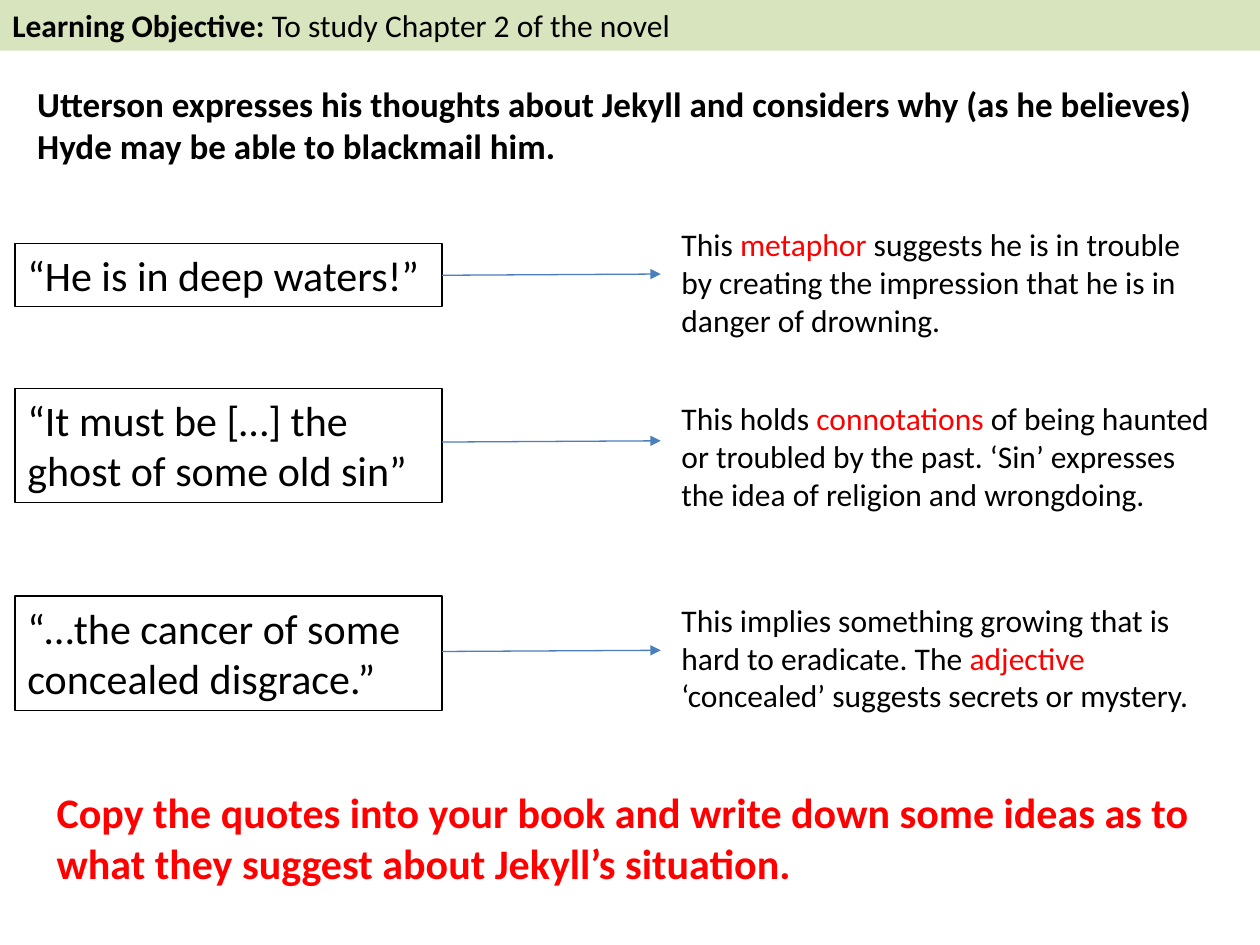
from lxml import etree
from pptx import Presentation
from pptx.dml.color import RGBColor
from pptx.enum.shapes import MSO_CONNECTOR, MSO_SHAPE
from pptx.enum.text import MSO_ANCHOR, PP_ALIGN
from pptx.oxml.ns import qn
from pptx.util import Pt

RECT = MSO_SHAPE.RECTANGLE
STRAIGHT = MSO_CONNECTOR.STRAIGHT
LEFT = PP_ALIGN.LEFT
TOP = MSO_ANCHOR.TOP

COLORS = {"black": "000000", "red": "FF0000", "banner": "D7E4BD", "arrow": "4B7EBC"}
FONT = "Calibri"
SLIDE_W, SLIDE_H = 720, 540
ROW_LEFT, ROW_W = 8.6, 691.2
QUOTE_W, NOTE_W = 244, 317.5
ARROW_W, ARROW_RISE = 125, 0.7

# Row top, quote height, note offset, arrow offset, quote, note runs
ROWS = [
    (139, 36.3, -13.7, 18.3, "“He is in deep waters!”",
     [("This ", {}), ("metaphor", {"color": "red"}),
      (" suggests he is in trouble by creating the impression that "
       "he is in danger of drowning.", {})]),
    (221.8, 65.4, 2.8, 30.8, "“It must be […] the ghost of some old sin”",
     [("This holds ", {}), ("connotations", {"color": "red"}),
      (" of being haunted or troubled by the past. ‘Sin’ expresses "
       "the idea of religion and wrongdoing.", {})]),
    (340.6, 65.4, -0.8, 31.7, "“…the cancer of some concealed disgrace.”",
     [("This implies something growing that is hard to eradicate. The ", {}),
      ("adjective ", {"color": "red"}),
      ("‘concealed’ suggests secrets or mystery.", {})]),
]


def rgb(name):
    return RGBColor.from_string(COLORS[name])


def write(sp, runs, size):
    """Fill a shape with one left-aligned paragraph of (text, format) runs."""
    tf = sp.text_frame
    tf.word_wrap = True
    tf.vertical_anchor = TOP
    p = tf.paragraphs[0]
    p.alignment = LEFT
    for text, fmt in runs:
        r = p.add_run()
        r.text = text
        values = {"name": FONT, "size": Pt(size), "bold": fmt.get("bold", False)}
        for key, value in values.items():
            setattr(r.font, key, value)
        r.font.color.rgb = rgb(fmt.get("color", "black"))


def add_text(s, box, runs, size):
    sp = s.shapes.add_textbox(*map(Pt, box))
    write(sp, runs, size)


def add_box(s, box, runs, size, fill=None, line=None):
    sp = s.shapes.add_shape(RECT, *map(Pt, box))
    sp.shadow.inherit = False
    if fill:
        sp.fill.solid()
        sp.fill.fore_color.rgb = rgb(fill)
    else:
        sp.fill.background()
    if line:
        sp.line.color.rgb = rgb(line)
        sp.line.width = Pt(0.75)
    else:
        sp.line.fill.background()
    write(sp, runs, size)


def add_arrow(s, x1, y1, x2, y2):
    c = s.shapes.add_connector(STRAIGHT, Pt(x1), Pt(y1), Pt(x2), Pt(y2))
    c.line.color.rgb = rgb("arrow")
    c.line.width = Pt(0.75)
    etree.SubElement(c.line._get_or_add_ln(), qn("a:tailEnd"), type="triangle")
    etree.SubElement(c._element.spPr, qn("a:effectLst"))


def add_quote_row(s, box, note_dy, arrow_dy, quote, note):
    """Place a framed quote, an arrow and its explanation across the box."""
    x, y, w, h = box
    quote_right = x + QUOTE_W
    add_box(s, (x, y, QUOTE_W, h), [(quote, {})], 24, line="black")
    add_arrow(s, quote_right, y + arrow_dy,
              quote_right + ARROW_W, y + arrow_dy - ARROW_RISE)
    add_text(s, (x + w - NOTE_W, y + note_dy, NOTE_W, 72.7), note, 18)


def main():
    prs = Presentation()
    prs.slide_width, prs.slide_height = Pt(SLIDE_W), Pt(SLIDE_H)
    s = prs.slides.add_slide(prs.slide_layouts[6])

    add_box(s, (0, 0, SLIDE_W, 29),
            [("Learning Objective: ", {"bold": True}),
             ("To study Chapter 2 of the novel", {})], 18, fill="banner")
    add_text(s, (14.2, 43.5, 692, 55.7),
             [("Utterson expresses his thoughts about Jekyll and considers why "
               "(as he believes) Hyde may be able to blackmail him.",
               {"bold": True})], 20)
    for top, height, *parts in ROWS:
        add_quote_row(s, (ROW_LEFT, top, ROW_W, height), *parts)
    add_text(s, (25.3, 446, 669, 65.4),
             [("Copy the quotes into your book and write down some ideas as to "
               "what they suggest about Jekyll’s situation.",
               {"bold": True, "color": "red"})], 24)
    prs.save("out.pptx")


if __name__ == "__main__":
    main()
